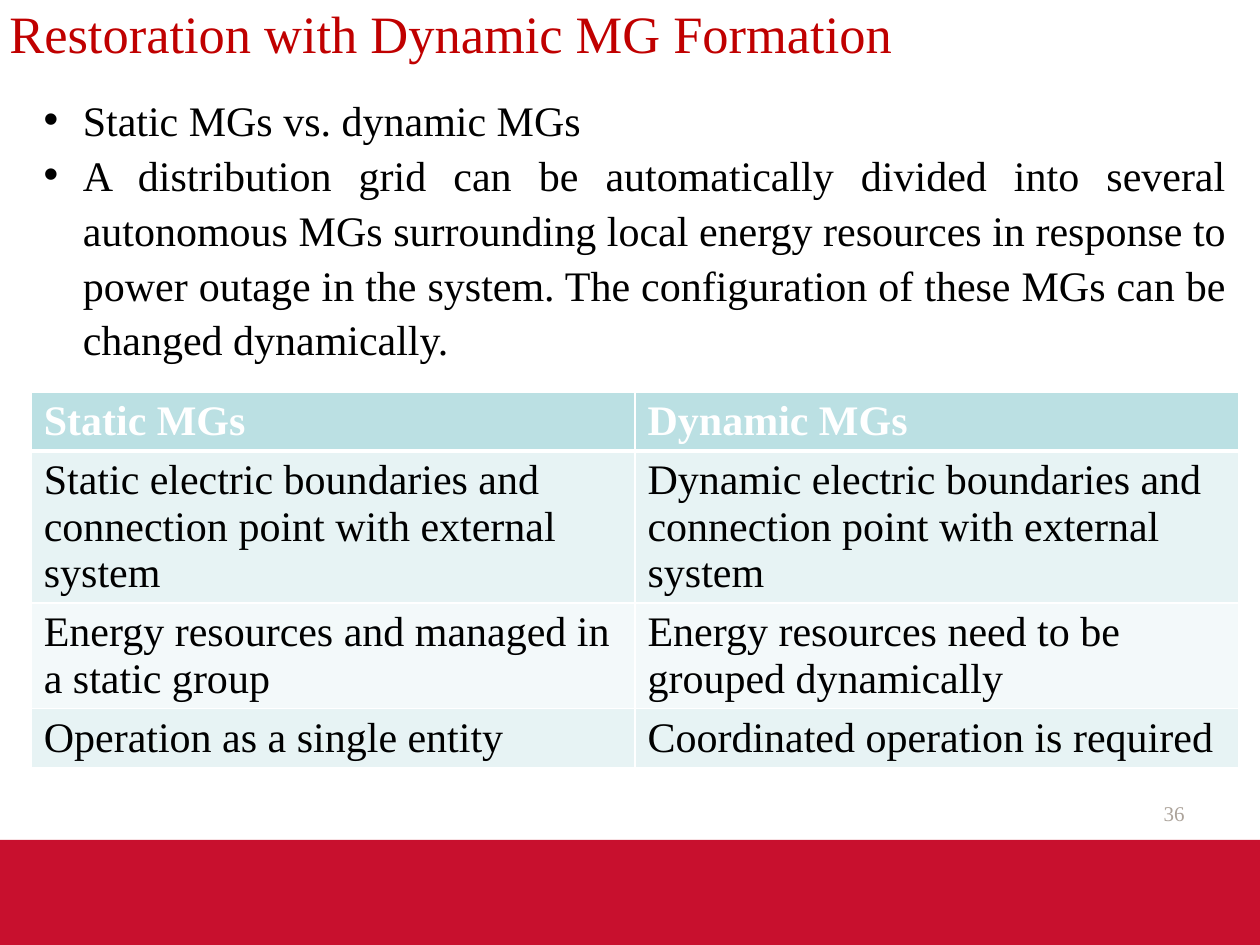
from lxml.etree import SubElement
from pptx import Presentation
from pptx.dml.color import RGBColor
from pptx.enum.shapes import MSO_SHAPE
from pptx.enum.text import MSO_ANCHOR, PP_ALIGN
from pptx.oxml.ns import qn
from pptx.util import Cm, Pt

WHITE = RGBColor(0xFF, 0xFF, 0xFF)
BLACK = RGBColor(0x00, 0x00, 0x00)
RED = RGBColor(0xC0, 0x00, 0x00)
BAND_RED = RGBColor(0xC8, 0x10, 0x2E)
GREY = RGBColor(0xAC, 0xA3, 0x9A)
HEADER = RGBColor(0xBB, 0xE0, 0xE3)
ODD = RGBColor(0xE7, 0xF3, 0xF4)
EVEN = RGBColor(0xF3, 0xF9, 0xFA)
FONT = "Times New Roman"

TITLE = "Restoration with Dynamic MG Formation"
BULLETS = [
    "Static MGs vs. dynamic MGs",
    "A distribution grid can be automatically divided into several autonomous MGs "
    "surrounding local energy resources in response to power outage in the system. "
    "The configuration of these MGs can be changed dynamically.",
]
ROWS = [
    ("Static MGs", "Dynamic MGs"),
    ("Static electric boundaries and connection point with external system",
     "Dynamic electric boundaries and connection point with external system"),
    ("Energy resources and managed in a static group",
     "Energy resources need to be grouped dynamically"),
    ("Operation as a single entity", "Coordinated operation is required"),
]
ROW_HEIGHTS = [1.04, 1.78, 1.78, 1.04]
PAGE = "36"


def write(tf, texts, size=24, color=BLACK, bold=False, align=None, spacing=None, bullet=False):
    for i, text in enumerate(texts):
        p = tf.add_paragraph() if i else tf.paragraphs[0]
        if bullet:
            pPr = p._p.get_or_add_pPr()
            pPr.set("marL", str(Cm(0.79)))
            pPr.set("indent", str(-Cm(0.79)))
            SubElement(pPr, qn("a:buFont"), typeface="Arial")
            SubElement(pPr, qn("a:buChar"), char="•")
        p.alignment = align
        p.line_spacing = spacing
        r = p.add_run()
        r.text = text
        r.font.name = FONT
        r.font.size = Pt(size)
        r.font.bold = bold
        r.font.color.rgb = color


def add_text(s, box, texts, anchor=MSO_ANCHOR.TOP, inset=(0.25, 0.13), **fmt):
    tf = s.shapes.add_textbox(*map(Cm, box)).text_frame
    tf.word_wrap = True
    tf.vertical_anchor = anchor
    tf.margin_left = tf.margin_right = Cm(inset[0])
    tf.margin_top = tf.margin_bottom = Cm(inset[1])
    write(tf, texts, **fmt)


def set_borders(cell, widths):
    tcPr = cell._tc.get_or_add_tcPr()
    for side, width in widths.items():
        ln = SubElement(tcPr, qn("a:" + side), w=str(Pt(width)))
        SubElement(SubElement(ln, qn("a:solidFill")), qn("a:srgbClr"), val=str(WHITE))


def add_comparison(s):
    table = s.shapes.add_table(len(ROWS), 2, Cm(0.63), Cm(7.9), Cm(24.34), Cm(sum(ROW_HEIGHTS))).table
    for i, (row, height) in enumerate(zip(ROWS, ROW_HEIGHTS)):
        table.rows[i].height = Cm(height)
        head = i == 0
        for j, text in enumerate(row):
            cell = table.cell(i, j)
            set_borders(cell, {"lnL": 1, "lnR": 1, "lnT": 3 if i == 1 else 1, "lnB": 3 if head else 1})
            cell.fill.solid()
            cell.fill.fore_color.rgb = HEADER if head else ODD if i % 2 else EVEN
            write(cell.text_frame, [text], color=WHITE if head else BLACK, bold=head)


def main():
    prs = Presentation()
    prs.slide_width, prs.slide_height = Cm(25.4), Cm(19.05)
    s = prs.slides.add_slide(prs.slide_layouts[6])

    sp = s.shapes.add_shape(MSO_SHAPE.RECTANGLE, 0, Cm(16.93), Cm(25.4), Cm(2.12))
    sp.shadow.inherit = False
    sp.fill.solid()
    sp.fill.fore_color.rgb = BAND_RED
    sp.line.fill.background()

    add_comparison(s)
    add_text(s, (18.2, 15.88, 5.93, 1.01), [PAGE], anchor=MSO_ANCHOR.MIDDLE,
             size=12, color=GREY, align=PP_ALIGN.RIGHT)
    add_text(s, (0.63, 1.68, 24.34, 5.39), BULLETS, align=PP_ALIGN.JUSTIFY, spacing=1.09, bullet=True)
    add_text(s, (0, 0.1, 23.65, 1.27), [TITLE], anchor=MSO_ANCHOR.MIDDLE, inset=(0.19, 0.1),
             size=30, color=RED, spacing=0.9)
    prs.save("out.pptx")


if __name__ == "__main__":
    main()
